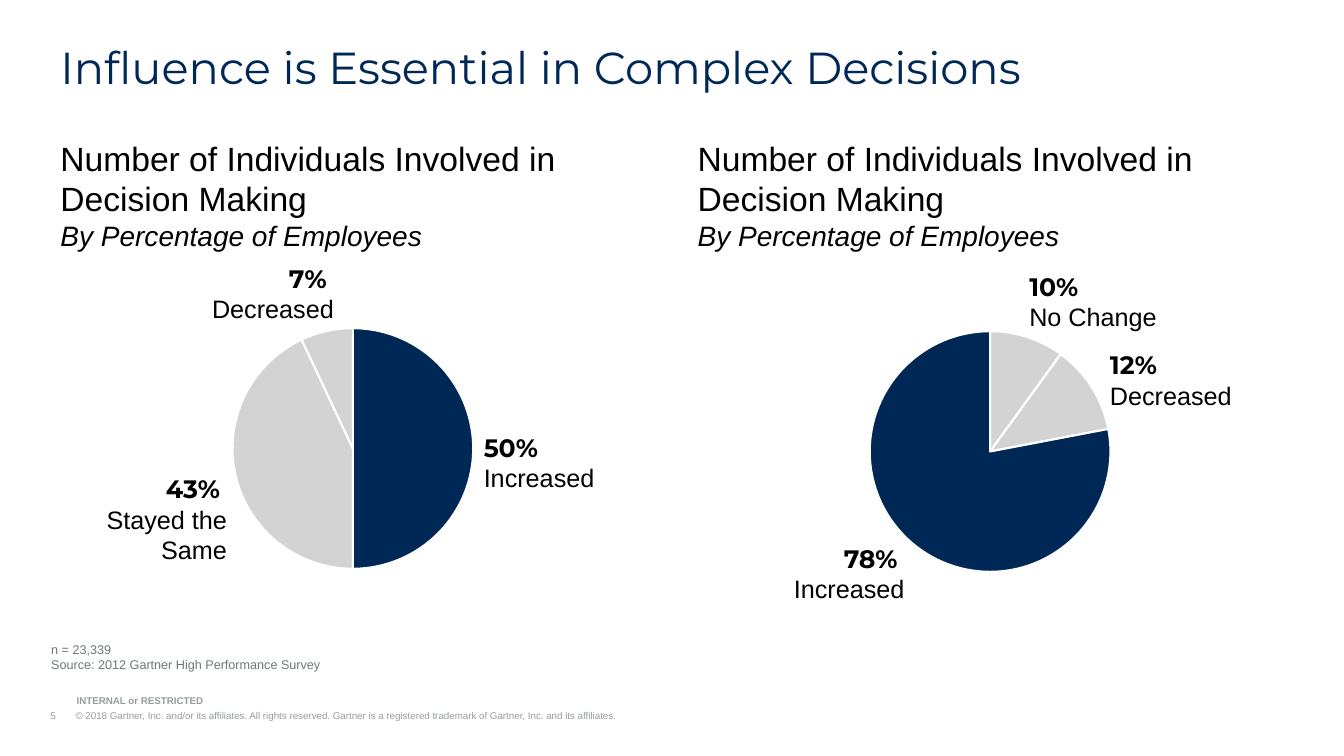
"""Build a slide with two pie charts about influence in complex decisions."""
from lxml.etree import SubElement
from pptx import Presentation
from pptx.chart.data import CategoryChartData
from pptx.dml.color import RGBColor
from pptx.enum.chart import XL_CHART_TYPE
from pptx.enum.text import MSO_ANCHOR, PP_ALIGN
from pptx.oxml import parse_xml
from pptx.oxml.ns import nsdecls, qn
from pptx.util import Inches, Pt

NAVY = RGBColor(0x00, 0x28, 0x56)
SILVER = RGBColor(0xD3, 0xD3, 0xD3)
BLACK = RGBColor(0x00, 0x00, 0x00)
WHITE = RGBColor(0xFF, 0xFF, 0xFF)
NOTE_GRAY = RGBColor(0x6F, 0x78, 0x78)
FOOTER_GRAY = RGBColor(0x97, 0x9D, 0x9D)

deck = Presentation()
deck.slide_width, deck.slide_height = Inches(13.33), Inches(7.5)
page = deck.slides.add_slide(deck.slide_layouts[6])


def add_frame(left, top, width, height):
    box = page.shapes.add_textbox(Inches(left), Inches(top), Inches(width), Inches(height))
    box.text_frame.word_wrap = True
    return box.text_frame


def add_span(para, text, size=18, font="Arial", color=BLACK, bold=False, italic=False):
    span = para.add_run()
    span.text = text
    span.font.size = Pt(size)
    span.font.name = font
    span.font.color.rgb = color
    span.font.bold = bold
    span.font.italic = italic


title = add_frame(0.5, 0.4, 12.33, 0.48).paragraphs[0]
title.line_spacing = 0.9
title.space_after = Pt(12)
add_span(title, "Influence is Essential in Complex Decisions", size=32, font="Montserrat", color=NAVY)

for left in (0.5, 6.82):
    heading = add_frame(left, 1.32, 6.01, 1.25).paragraphs[0]
    add_span(heading, "Number of Individuals Involved in Decision Making", size=24)
    heading.add_line_break()
    add_span(heading, "By Percentage of Employees", size=20, italic=True)

pies = [
    (1.51, 3.12, (50, 43, 7), (NAVY, SILVER, SILVER)),
    (7.83, 3.15, (10, 12, 78), (SILVER, SILVER, NAVY)),
]
for left, top, shares, colors in pies:
    chart_data = CategoryChartData()
    chart_data.categories = ["1", "2", "3"]
    chart_data.add_series("Series 1", shares)
    chart = page.shapes.add_chart(
        XL_CHART_TYPE.PIE, Inches(left), Inches(top), Inches(3.98), Inches(2.66), chart_data
    ).chart
    chart.has_title = False
    chart.has_legend = False
    chart.font.name = "Arial"
    chart.font.size = Pt(10)
    chart.font.color.rgb = BLACK
    plot = chart.plots[0]
    plot.vary_by_categories = True
    for index, color in enumerate(colors):
        slice_format = plot.series[0].points[index].format
        slice_format.fill.solid()
        slice_format.fill.fore_color.rgb = color
        slice_format.line.color.rgb = WHITE
        slice_format.line.width = Pt(1.5)
    plot_area = chart.element.find(".//" + qn("c:plotArea"))
    for layout in plot_area.findall(qn("c:layout")):
        plot_area.remove(layout)
    plot_area.insert(0, parse_xml(
        f'<c:layout {nsdecls("c")}><c:manualLayout><c:layoutTarget val="inner"/>'
        '<c:xMode val="edge"/><c:yMode val="edge"/><c:x val="0.2"/><c:y val="0.05"/>'
        '<c:w val="0.6"/><c:h val="0.9"/></c:manualLayout></c:layout>'
    ))

slice_labels = [
    (1.97, 2.56, 1.44, 0.71, "7% ", "Decreased", PP_ALIGN.RIGHT),
    (0.78, 4.65, 1.57, 1.01, "43% ", "Stayed the Same", PP_ALIGN.RIGHT),
    (4.7, 4.24, 1.44, 0.71, "50% ", "Increased", PP_ALIGN.LEFT),
    (10.11, 2.64, 1.59, 0.71, "10% ", "No Change", PP_ALIGN.LEFT),
    (10.91, 3.42, 1.59, 0.71, "12% ", "Decreased", PP_ALIGN.LEFT),
    (7.5, 5.34, 1.57, 0.71, "78% ", "Increased", PP_ALIGN.RIGHT),
]
for left, top, width, height, share, answer, align in slice_labels:
    label = add_frame(left, top, width, height).paragraphs[0]
    label.alignment = align
    add_span(label, share, font="Montserrat", bold=True)
    label.add_line_break()
    add_span(label, answer)

note = add_frame(0.41, 6.32, 10.15, 0.4)
add_span(note.paragraphs[0], "n = 23,339", size=9, color=NOTE_GRAY)
add_span(note.add_paragraph(), "Source: 2012 Gartner High Performance Survey", size=9, color=NOTE_GRAY)

footers = [
    (0.5, 7.04, 7.99, False, "5\t© 2018 Gartner, Inc. and/or its affiliates. All rights reserved. "
     "Gartner is a registered trademark of Gartner, Inc. and its affiliates."),
    (0.76, 6.89, 2.53, True, "INTERNAL or RESTRICTED"),
]
for left, top, width, bold, text in footers:
    frame = add_frame(left, top, width, 0.12)
    frame.margin_left = frame.margin_right = frame.margin_top = frame.margin_bottom = 0
    frame.vertical_anchor = MSO_ANCHOR.BOTTOM
    footer = frame.paragraphs[0]
    properties = footer._p.get_or_add_pPr()
    properties.set("marL", str(Inches(0.25)))
    properties.set("indent", str(Inches(-0.25)))
    tabs = SubElement(properties, qn("a:tabLst"))
    SubElement(tabs, qn("a:tab"), pos=str(Inches(0.25)), algn="l")
    add_span(footer, text, size=7, color=FOOTER_GRAY, bold=bold)

deck.save("out.pptx")
